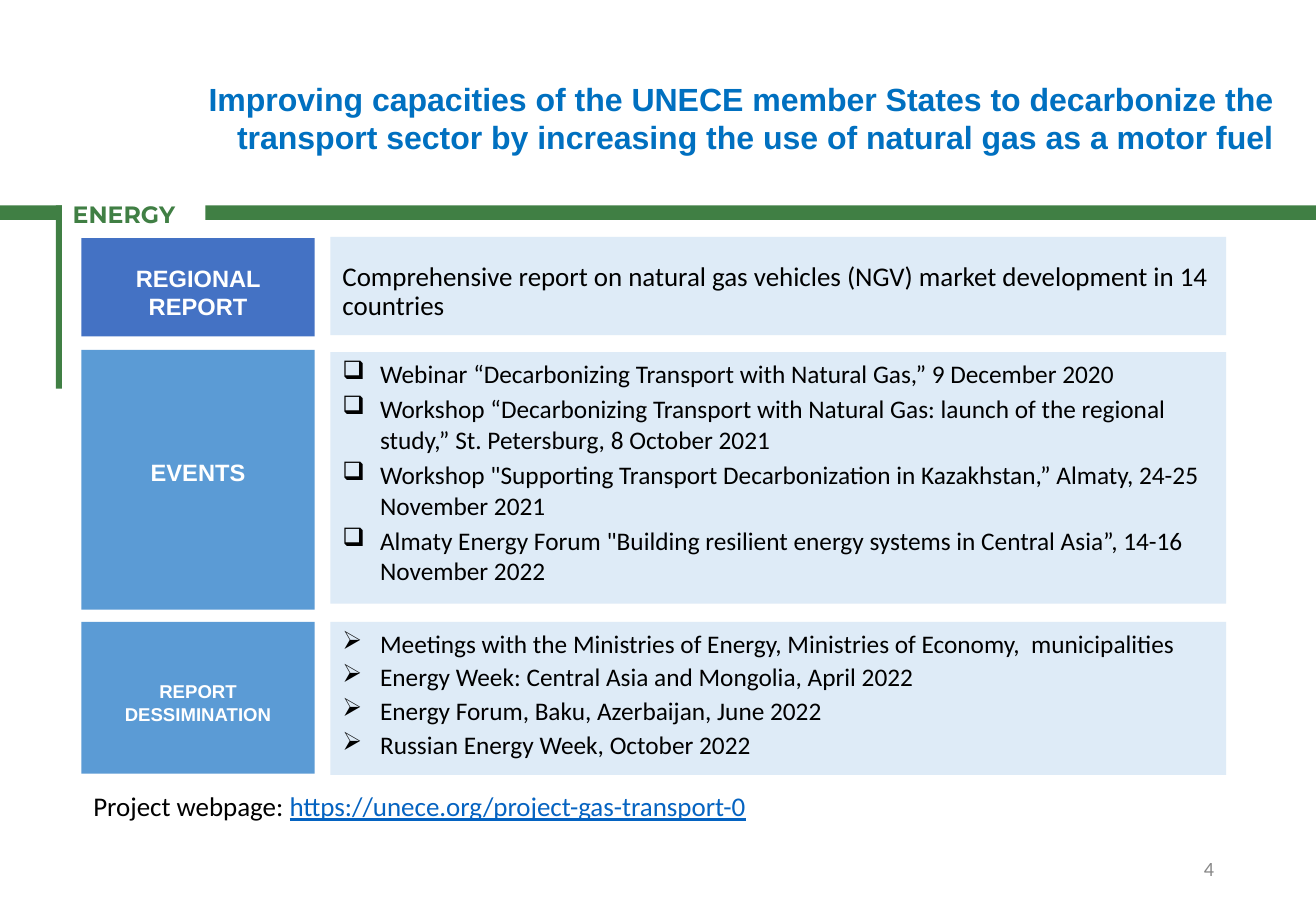
from dataclasses import dataclass

from lxml import etree
from pptx import Presentation
from pptx import util as u
from pptx.dml.color import RGBColor
from pptx.enum import shapes, text
from pptx.oxml import ns


@dataclass(frozen=True)
class Theme:
    green: str = "407F44"
    dark_blue: str = "4472C4"
    blue: str = "5B9BD5"
    pale_blue: str = "DEEBF7"
    title_blue: str = "0070C0"
    link: str = "0563C1"
    grey: str = "888888"
    white: str = "FFFFFF"
    black: str = "000000"
    heading_font: str = "Arial"
    body_font: str = "Calibri"
    brand_font: str = "Montserrat"
    title_size: float = 19
    body_size: float = 16
    list_size: float = 15
    label_size: float = 14
    small_label_size: float = 11
    number_size: float = 12


THEME = Theme()
LEFT, TOP, MIDDLE = text.PP_ALIGN.LEFT, text.MSO_ANCHOR.TOP, text.MSO_ANCHOR.MIDDLE
CENTER, RIGHT = text.PP_ALIGN.CENTER, text.PP_ALIGN.RIGHT


class SlideBuilder:
    def __init__(self, slide, theme):
        self.slide = slide
        self.theme = theme

    def bar(self, box, color):
        shape = self.slide.shapes.add_shape(
            shapes.MSO_SHAPE.RECTANGLE, *map(u.Inches, box))
        shape.shadow.inherit = False
        shape.fill.solid()
        shape.fill.fore_color.rgb = RGBColor.from_string(color)
        shape.line.fill.background()
        return shape

    def frame(self, shape, anchor=TOP, side=0.1, top=0.05):
        frame = shape.text_frame
        frame.word_wrap = True
        frame.vertical_anchor = anchor
        frame.margin_left = frame.margin_right = u.Inches(side)
        frame.margin_top = u.Inches(top)
        frame.margin_bottom = u.Inches(0.05)
        return frame

    def style(self, paragraph, size, color, font, bold=False, align=LEFT):
        paragraph.alignment = align
        paragraph.font.size = u.Pt(size)
        paragraph.font.name = font
        paragraph.font.bold = bold
        paragraph.font.color.rgb = RGBColor.from_string(color)

    def text(self, box, words, size, color, font, bold=False, align=LEFT, anchor=TOP):
        shape = self.slide.shapes.add_textbox(*map(u.Inches, box))
        paragraph = self.frame(shape, anchor).paragraphs[0]
        paragraph.text = words
        self.style(paragraph, size, color, font, bold, align)
        return paragraph

    def label(self, box, words, size, color, top):
        """Draw a filled row heading whose text starts top inches down."""
        frame = self.frame(self.bar(box, color), side=0.28, top=top)
        paragraph = frame.paragraphs[0]
        paragraph.text = words
        self.style(paragraph, size, self.theme.white, self.theme.heading_font, True, CENTER)

    def bullets(self, box, items, mark, space_after):
        frame = self.frame(self.bar(box, self.theme.pale_blue))
        for index, item in enumerate(items):
            paragraph = frame.add_paragraph() if index else frame.paragraphs[0]
            paragraph.text = item
            paragraph.space_after = u.Pt(space_after)
            properties = paragraph._p.get_or_add_pPr()
            properties.set("marL", str(u.Inches(0.31)))
            properties.set("indent", str(u.Inches(-0.31)))
            etree.SubElement(properties, ns.qn("a:buChar")).set("char", mark)
            self.style(paragraph, self.theme.list_size, self.theme.black, self.theme.body_font)


EVENTS = [
    "Webinar “Decarbonizing Transport with Natural Gas,” 9 December 2020",
    "Workshop “Decarbonizing Transport with Natural Gas: launch of the regional study,” "
    "St. Petersburg, 8 October 2021",
    'Workshop "Supporting Transport Decarbonization in Kazakhstan,” Almaty, '
    "24-25 November 2021",
    'Almaty Energy Forum "Building resilient energy systems in Central Asia”, '
    "14-16 November 2022",
]
DISSEMINATION = [
    "Meetings with the Ministries of Energy, Ministries of Economy,  municipalities",
    "Energy Week: Central Asia and Mongolia, April 2022",
    "Energy Forum, Baku, Azerbaijan, June 2022",
    "Russian Energy Week, October 2022",
]
LABEL_LEFT, LABEL_WIDTH = 0.67, 1.92
PANEL_LEFT, PANEL_WIDTH = 2.72, 7.37


def main():
    presentation = Presentation()
    presentation.slide_width = u.Inches(10.83)
    presentation.slide_height = u.Inches(7.5)
    slide = presentation.slides.add_slide(presentation.slide_layouts[6])
    builder = SlideBuilder(slide, THEME)

    for box in [(1.69, 1.69, 9.14, 0.12), (0, 1.69, 0.51, 0.12), (0.46, 1.69, 0.05, 1.51)]:
        builder.bar(box, THEME.green)
    builder.text((0.5, 1.6, 1.27, 0.41), "ENERGY", THEME.label_size, THEME.green,
                 THEME.brand_font, bold=True)
    builder.text((1.5, 0.28, 9.08, 1.38),
                 "Improving capacities of the UNECE member States to decarbonize the "
                 "transport sector by increasing the use of natural gas as a motor fuel",
                 THEME.title_size, THEME.title_blue, THEME.heading_font,
                 bold=True, align=RIGHT, anchor=MIDDLE)

    for top, height, words, size, color, text_top in [
        (1.96, 0.81, "REGIONAL REPORT", THEME.label_size, THEME.dark_blue, 0.21),
        (2.88, 2.14, "EVENTS", THEME.label_size, THEME.blue, 0.89),
        (5.12, 1.25, "REPORT DESSIMINATION", THEME.small_label_size, THEME.blue, 0.48),
    ]:
        builder.label((LABEL_LEFT, top, LABEL_WIDTH, height), words, size, color, text_top)

    builder.bar((PANEL_LEFT, 1.95, PANEL_WIDTH, 0.81), THEME.pale_blue)
    report = builder.text((PANEL_LEFT, 2.12, PANEL_WIDTH, 0.59),
                          "Comprehensive report on natural gas vehicles (NGV) market "
                          "development in 14 countries",
                          THEME.body_size, THEME.black, THEME.body_font)
    report.line_spacing = 0.9
    builder.bullets((PANEL_LEFT, 2.9, PANEL_WIDTH, 2.07), EVENTS, "❑", 3)
    builder.bullets((PANEL_LEFT, 5.12, PANEL_WIDTH, 1.26), DISSEMINATION, "➢", 2)

    webpage = builder.text((LABEL_LEFT, 6.45, 9.34, 0.37), "Project webpage: ",
                           THEME.body_size, THEME.black, THEME.body_font)
    address = webpage.add_run()
    address.text = "https://unece.org/project-gas-transport-0"
    address.font.underline = True
    address.font.color.rgb = RGBColor.from_string(THEME.link)
    builder.text((7.65, 6.95, 2.44, 0.4), "4", THEME.number_size, THEME.grey,
                 THEME.body_font, align=RIGHT, anchor=MIDDLE)

    presentation.save("out.pptx")


if __name__ == "__main__":
    main()
